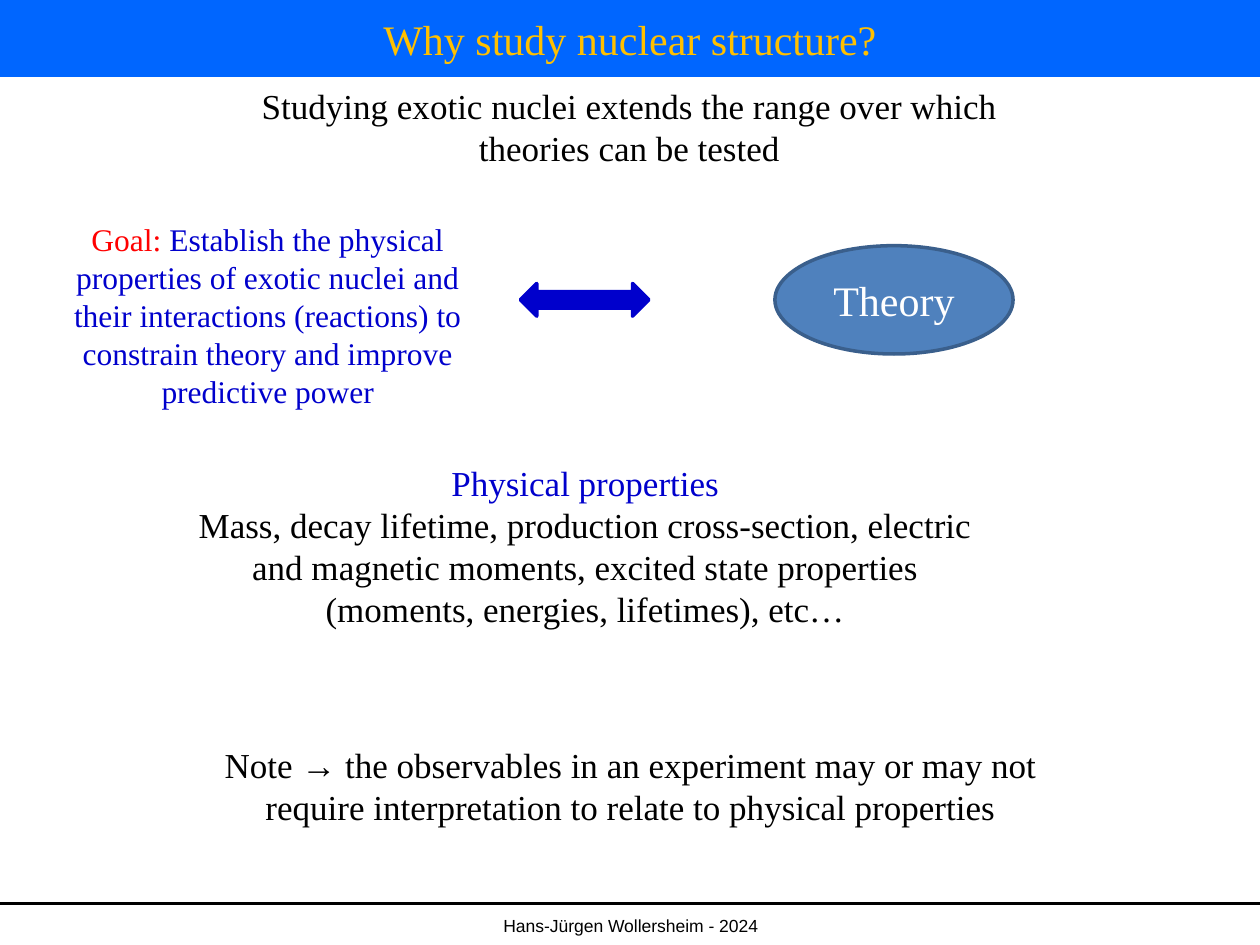
"""Build the slide on why nuclear structure is studied."""
from lxml import etree
from pptx import Presentation
from pptx.dml.color import RGBColor
from pptx.enum.shapes import MSO_CONNECTOR, MSO_SHAPE
from pptx.enum.text import MSO_ANCHOR, PP_ALIGN
from pptx.oxml.ns import qn
from pptx.util import Inches, Pt

COLORS = {"black": "000000", "white": "FFFFFF", "banner": "0066FF", "gold": "FFC000",
          "red": "FF0000", "blue": "0000CC", "oval": "4F81BD", "edge": "3A5F8C"}


def rgb(name):
    return RGBColor.from_string(COLORS[name])


def write(sp, lines, size, font="Times New Roman"):
    tf = sp.text_frame
    tf.vertical_anchor = MSO_ANCHOR.MIDDLE if sp.shape_type == 1 else MSO_ANCHOR.TOP
    for i, line in enumerate(lines):
        p = tf.paragraphs[0] if i == 0 else tf.add_paragraph()
        p.alignment = PP_ALIGN.CENTER
        for text, color in line:
            r = p.add_run()
            r.text = text
            r.font.size = Pt(size)
            r.font.name = font
            r.font.color.rgb = rgb(color)


prs = Presentation()
prs.slide_width, prs.slide_height = Inches(10), Inches(7.5)
s = prs.slides.add_slide(prs.slide_layouts[6])

rule = s.shapes.add_connector(MSO_CONNECTOR.STRAIGHT, 0, Inches(7.17), Inches(10), Inches(7.17))
rule.line.color.rgb = rgb("black")
rule.line.width = Pt(1.5)
etree.SubElement(rule.element.spPr, qn("a:effectLst"))

shapes = [
    (MSO_SHAPE.RECTANGLE, (0, 0, 10, 0.61), "banner", None,
     "Why study nuclear structure?", "gold"),
    (MSO_SHAPE.LEFT_RIGHT_ARROW, (4.13, 2.25, 1.02, 0.26), "blue", "blue", None, None),
    (MSO_SHAPE.OVAL, (6.15, 1.95, 1.89, 0.86), "oval", "edge", "Theory", "white"),
]
for kind, box, fill, line, text, color in shapes:
    sp = s.shapes.add_shape(kind, *map(Inches, box))
    sp.shadow.inherit = False
    sp.fill.solid()
    sp.fill.fore_color.rgb = rgb(fill)
    if line:
        sp.line.color.rgb = rgb(line)
        sp.line.width = Pt(2)
    else:
        sp.line.fill.background()
    if text:
        write(sp, [[(text, color)]], 24)

texts = [
    ((1.96, 0.62, 6.07, 0.77), 20, [
        [("Studying exotic nuclei extends the range over which", "black")],
        [("theories can be tested", "black")]]),
    ((0.43, 1.7, 3.39, 1.62), 18, [
        [("Goal:", "red"), (" Establish the physical", "blue")],
        [("properties of exotic nuclei and", "blue")],
        [("their interactions (reactions) to", "blue")],
        [("constrain theory and improve", "blue")],
        [("predictive power", "blue")]]),
    ((1.46, 3.61, 6.37, 1.45), 20, [
        [("Physical properties", "blue")],
        [("Mass, decay lifetime, production cross-section, electric", "black")],
        [("and magnetic moments, excited state properties", "black")],
        [("(moments, energies, lifetimes), etc…", "black")]]),
    ((1.66, 5.85, 6.69, 0.77), 20, [
        [("Note → the observables in an experiment may or may not", "black")],
        [("require interpretation to relate to physical properties", "black")]]),
]
for box, size, lines in texts:
    sp = s.shapes.add_textbox(*map(Inches, box))
    sp.text_frame.word_wrap = False
    write(sp, lines, size)

footer = s.shapes.add_textbox(Inches(0.01), Inches(7.21), Inches(9.99), Inches(0.29))
footer.text_frame.word_wrap = True
write(footer, [[("Hans-Jürgen Wollersheim - 2024", "black")]], 10, "Arial")

prs.save("out.pptx")
